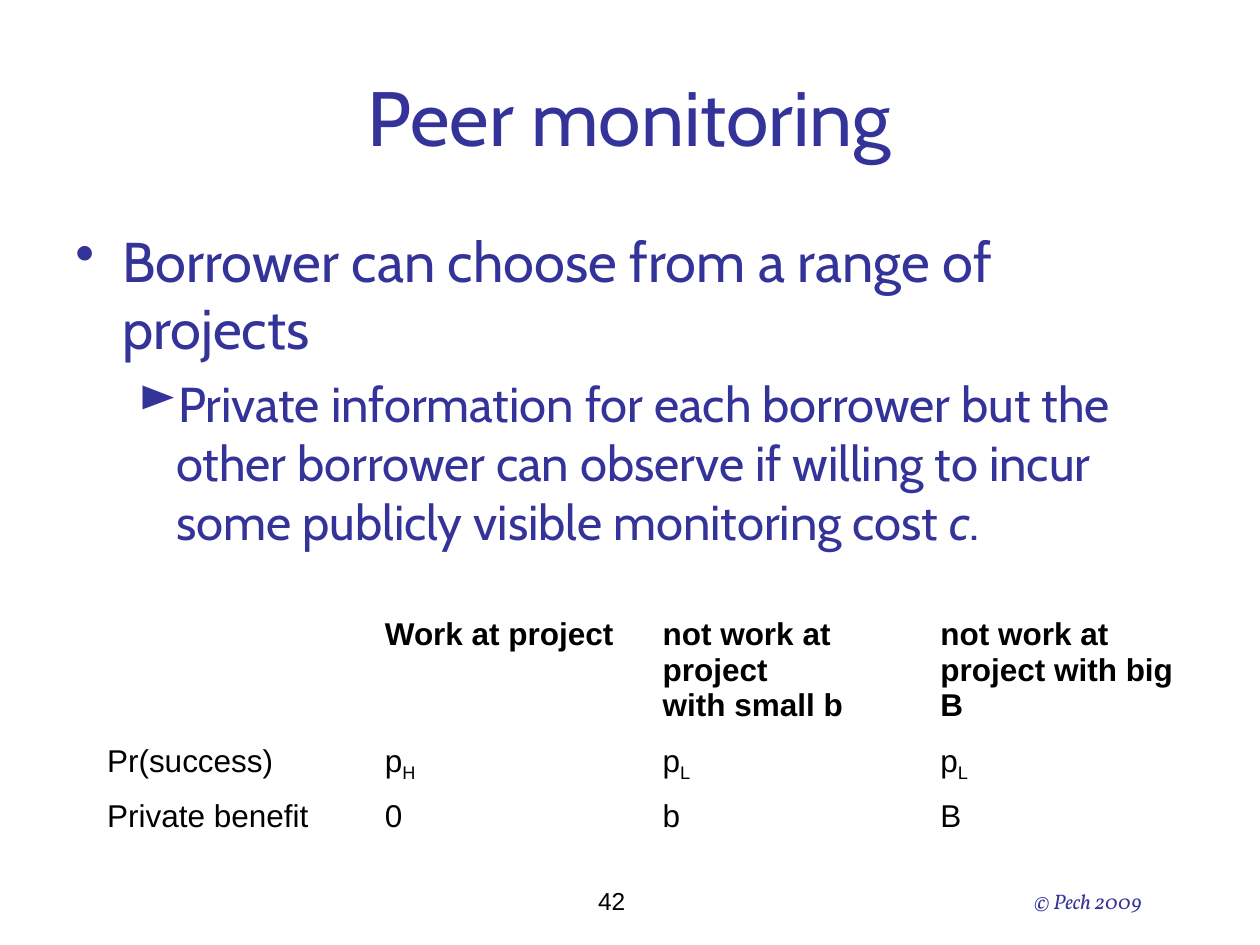
from dataclasses import dataclass

import pptx
import pptx.dml.color
import pptx.enum.text
import pptx.util
from lxml import etree
from pptx.oxml.ns import qn
from pptx.util import Inches


@dataclass(frozen=True)
class Theme:
    blue: str = "333399"
    black: str = "000000"
    white: str = "FFFFFF"
    heading_font: str = "Cabin"
    table_font: str = "Arial"
    credit_font: str = "Vollkorn"
    title_size: int = 44
    bullet_size: int = 32
    detail_size: int = 28
    table_size: int = 18
    number_size: int = 14
    credit_size: int = 12


theme = Theme()
CENTER = pptx.enum.text.PP_ALIGN.CENTER


def set_font(paragraph, name, size, color, bold=False):
    font = paragraph.font
    font.name = name
    font.size = pptx.util.Pt(size)
    font.bold = bold
    font.color.rgb = pptx.dml.color.RGBColor.from_string(color)


def add_text_frame(left, top, width, height):
    """Add a wrapping text box and return its text frame."""
    box = slide.shapes.add_textbox(Inches(left), Inches(top), Inches(width), Inches(height))
    box.text_frame.word_wrap = True
    return box.text_frame


presentation = pptx.Presentation()
presentation.slide_width = Inches(10)
presentation.slide_height = Inches(7.5)
slide = presentation.slides.add_slide(presentation.slide_layouts[5])

# Title
title = slide.shapes.title
title.left, title.top = Inches(0.5), Inches(0.3)
title.width, title.height = Inches(8.99), Inches(1.24)
title.text_frame.text = "Peer monitoring"
title.text_frame.vertical_anchor = pptx.enum.text.MSO_ANCHOR.MIDDLE
title_paragraph = title.text_frame.paragraphs[0]
title_paragraph.alignment = CENTER
set_font(title_paragraph, theme.heading_font, theme.title_size, theme.blue)

# Bulleted text: runs, level, bullet, left margin, hanging indent, space before, size
bullets = [
    (["Borrower can choose from a range of projects"],
     0, "•", 0.37, 0.37, 8, theme.bullet_size),
    (["Private information for each borrower but the other borrower can observe "
      "if willing to incur some publicly visible monitoring cost ", "c", "."],
     1, "►", 0.8, 0.3, 7, theme.detail_size),
]
body = add_text_frame(0.5, 1.75, 8.99, 2.87)
for index, (texts, level, bullet, margin, hanging, space, size) in enumerate(bullets):
    paragraph = body.add_paragraph() if index else body.paragraphs[0]
    paragraph.level = level
    paragraph.space_before = pptx.util.Pt(space)
    for text in texts:
        run = paragraph.add_run()
        run.text = text
        if text == "c":
            run.font.italic = True
    properties = paragraph._p.get_or_add_pPr()
    properties.set("marL", str(Inches(margin)))
    properties.set("indent", str(-Inches(hanging)))
    bullet_color = etree.SubElement(properties, qn("a:buClr"))
    etree.SubElement(bullet_color, qn("a:srgbClr"), val=theme.blue)
    etree.SubElement(properties, qn("a:buChar"), char=bullet)
    set_font(paragraph, theme.heading_font, size, theme.blue)

# Payoff table: a cell is a list of paragraphs, "_" starts a subscript
rows = [
    [[""], ["Work at project"], ["not work at project", "with small b"],
     ["not work at project with big B"]],
    [["Pr(success)"], ["p_H"], ["p_L"], ["p_L"]],
    [["Private benefit"], ["0"], ["b"], ["B"]],
]
row_heights = [1, 0.41, 0.41]
table = slide.shapes.add_table(
    len(rows), len(rows[0]), Inches(0.75), Inches(4.85),
    Inches(8.82), Inches(sum(row_heights))).table
for row, height in zip(table.rows, row_heights):
    row.height = Inches(height)
for row_index, row in enumerate(rows):
    for column_index, lines in enumerate(row):
        cell = table.cell(row_index, column_index)
        cell.fill.solid()
        cell.fill.fore_color.rgb = pptx.dml.color.RGBColor.from_string(theme.white)
        for line_index, line in enumerate(lines):
            frame = cell.text_frame
            paragraph = frame.add_paragraph() if line_index else frame.paragraphs[0]
            base, _, subscript = line.partition("_")
            if base:
                paragraph.add_run().text = base
            if subscript:
                run = paragraph.add_run()
                run.text = subscript
                run.font._element.set("baseline", "-25000")
            set_font(paragraph, theme.table_font, theme.table_size, theme.black,
                     bold=row_index == 0)

# Footer
number = add_text_frame(3.69, 6.98, 2.33, 0.52).paragraphs[0]
number.text = "42"
number.alignment = CENTER
set_font(number, theme.table_font, theme.number_size, theme.black)

credit = add_text_frame(8.11, 7, 1.61, 0.3).paragraphs[0]
credit.text = "© Pech 2009"
set_font(credit, theme.credit_font, theme.credit_size, theme.blue)
credit.font.italic = True

presentation.save("out.pptx")
